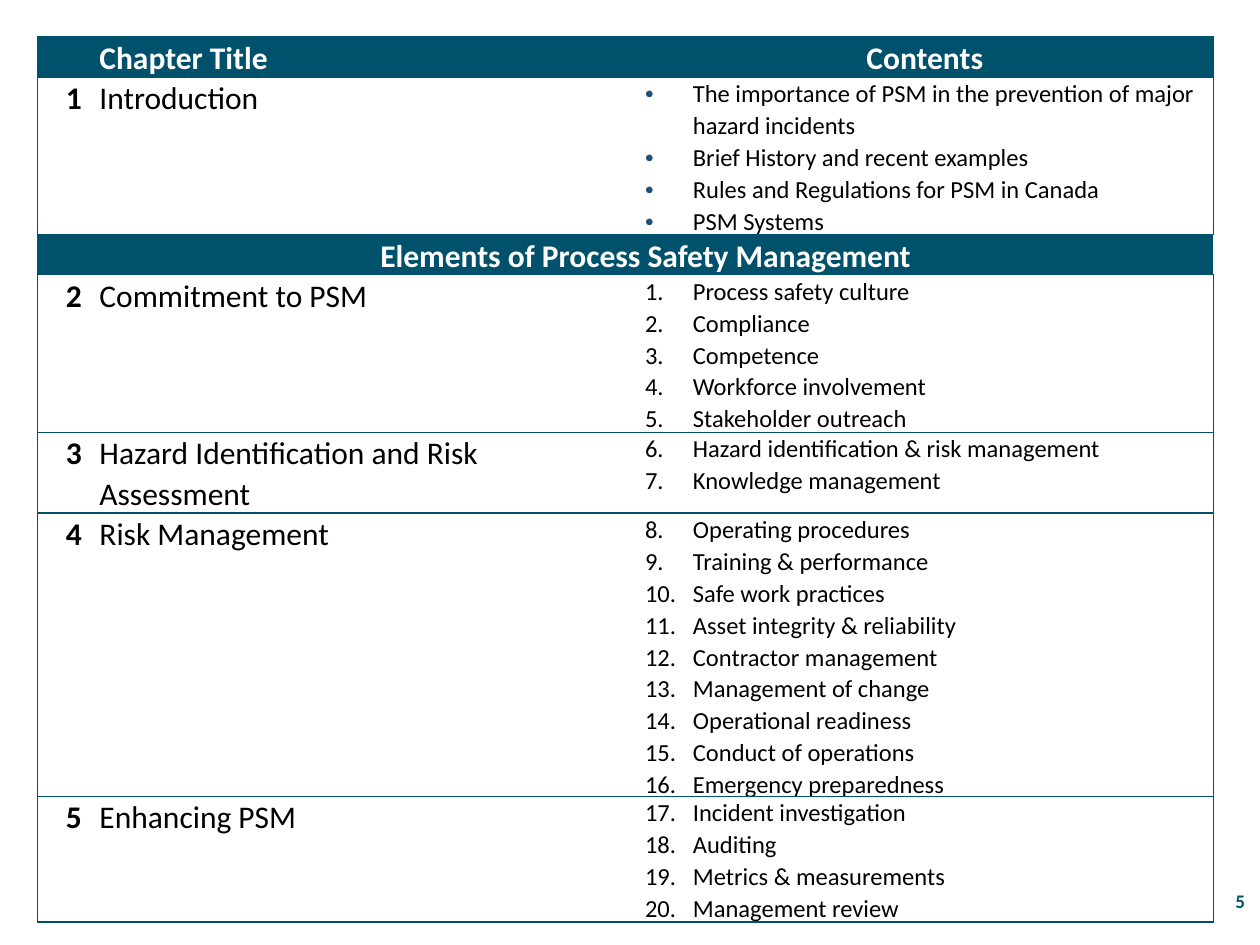
from lxml.etree import SubElement
from pptx import Presentation
from pptx.dml.color import RGBColor
from pptx.enum.text import MSO_ANCHOR, PP_ALIGN
from pptx.oxml import parse_xml
from pptx.oxml.ns import nsdecls, qn
from pptx.util import Inches, Pt

COLORS = {"teal": "00516B", "white": "FFFFFF", "black": "000000", "bullet": "1F4E79"}
FONT = "Calibri"
COLUMN_WIDTHS = [0.42, 4.33, 4.58]
ROW_HEIGHTS = [0.27, 1.23, 0.29, 1.23, 0.54, 2.21, 0.98]
INTRODUCTION = [
    "The importance of PSM in the prevention of major hazard incidents",
    "Brief History and recent examples",
    "Rules and Regulations for PSM in Canada",
    "PSM Systems",
]
ELEMENT_CHAPTERS = [
    ("Commitment to PSM", [
        "Process safety culture", "Compliance", "Competence",
        "Workforce involvement", "Stakeholder outreach"]),
    ("Hazard Identification and Risk Assessment", [
        "Hazard identification & risk management", "Knowledge management"]),
    ("Risk Management", [
        "Operating procedures", "Training & performance", "Safe work practices",
        "Asset integrity & reliability", "Contractor management",
        "Management of change", "Operational readiness",
        "Conduct of operations", "Emergency preparedness"]),
    ("Enhancing PSM", [
        "Incident investigation", "Auditing", "Metrics & measurements",
        "Management review"]),
]


def add_text(paragraph, text, size=18, color="black", bold=False, align=PP_ALIGN.LEFT):
    paragraph.alignment = align
    run = paragraph.add_run()
    run.text = text
    run.font.name = FONT
    run.font.size = Pt(size)
    run.font.bold = bold
    run.font.color.rgb = RGBColor.from_string(COLORS[color])


def write_cell(cell, text, **style):
    paragraph = cell.text_frame.paragraphs[0]
    paragraph.line_spacing = 1.07
    add_text(paragraph, text, **style)
    return paragraph


def write_list(cell, items, start=None):
    """Write a numbered list from start, or a bulleted one without it."""
    frame = cell.text_frame
    for index, item in enumerate(items):
        paragraph = frame.add_paragraph() if index else frame.paragraphs[0]
        paragraph.line_spacing = 1.07
        add_text(paragraph, item, size=14)
        properties = paragraph._p.get_or_add_pPr()
        properties.set("marL", str(Inches(0.38)))
        properties.set("indent", str(-Inches(0.38)))
        if start is None:
            color = SubElement(properties, qn("a:buClr"))
            SubElement(color, qn("a:srgbClr"), val=COLORS["bullet"])
            SubElement(properties, qn("a:buFont"), typeface="Arial")
            SubElement(properties, qn("a:buChar"), char="•")
        else:
            SubElement(properties, qn("a:buFont"), typeface="+mj-lt")
            SubElement(properties, qn("a:buAutoNum"), type="arabicPeriod", startAt=str(start))


def set_borders(cell, sides):
    """Draw the given sides (letters of LRTB) and clear the others."""
    properties = cell._tc.get_or_add_tcPr()
    for index, side in enumerate("LRTB"):
        paint = (f'<a:solidFill><a:srgbClr val="{COLORS["teal"]}"/></a:solidFill>'
                 if side in sides else "<a:noFill/>")
        line = parse_xml(f'<a:ln{side} {nsdecls("a")} w="{Pt(0.75)}">{paint}</a:ln{side}>')
        properties.insert(index, line)


def format_grid(table, band_rows):
    last_column = len(COLUMN_WIDTHS) - 1
    for row_index, row in enumerate(table.rows):
        row.height = Inches(ROW_HEIGHTS[row_index])
        for column_index, cell in enumerate(row.cells):
            cell.margin_left = cell.margin_right = Inches(0.07)
            cell.margin_top = cell.margin_bottom = 0
            if row_index in band_rows:
                cell.fill.solid()
                cell.fill.fore_color.rgb = RGBColor.from_string(COLORS["teal"])
            else:
                cell.fill.background()
            outer = {0: "L", last_column: "R"}.get(column_index, "")
            set_borders(cell, "TB" + outer)


def write_chapter(table, row, number, title, items, start=None):
    write_cell(table.cell(row, 0), str(number), bold=True, align=PP_ALIGN.RIGHT)
    write_cell(table.cell(row, 1), title)
    write_list(table.cell(row, 2), items, start)


def add_chapter_table(slide, left, top, width, height):
    table = slide.shapes.add_table(
        len(ROW_HEIGHTS), len(COLUMN_WIDTHS), left, top, width, height).table
    table.first_row = table.horz_banding = False
    for column, column_width in zip(table.columns, COLUMN_WIDTHS):
        column.width = Inches(column_width)
    format_grid(table, band_rows=(0, 2))

    heading = {"color": "white", "bold": True}
    write_cell(table.cell(0, 1), "Chapter Title", **heading)
    write_cell(table.cell(0, 2), "Contents", align=PP_ALIGN.CENTER, **heading)
    write_chapter(table, 1, 1, "Introduction", INTRODUCTION)

    band = table.cell(2, 0)
    band.merge(table.cell(2, 2))
    paragraph = write_cell(band, "Elements of Process Safety Management",
                           align=PP_ALIGN.CENTER, **heading)
    paragraph._p.get_or_add_pPr().set("marL", str(Inches(0.32)))

    start = 1
    for number, (title, items) in enumerate(ELEMENT_CHAPTERS, 2):
        write_chapter(table, number + 1, number, title, items, start)
        start += len(items)


def add_page_number(slide, left, top, width, height):
    frame = slide.shapes.add_textbox(left, top, width, height).text_frame
    frame.word_wrap = True
    frame.vertical_anchor = MSO_ANCHOR.MIDDLE
    add_text(frame.paragraphs[0], "5", size=11, color="teal", bold=True,
             align=PP_ALIGN.RIGHT)


def main():
    presentation = Presentation()
    presentation.slide_width = Inches(10)
    presentation.slide_height = Inches(7.5)
    slide = presentation.slides.add_slide(presentation.slide_layouts[6])
    add_page_number(slide, Inches(8.72), Inches(6.95), Inches(1.26), Inches(0.4))
    add_chapter_table(slide, Inches(0.3), Inches(0.29), Inches(9.33), Inches(7.03))
    presentation.save("out.pptx")


if __name__ == "__main__":
    main()
